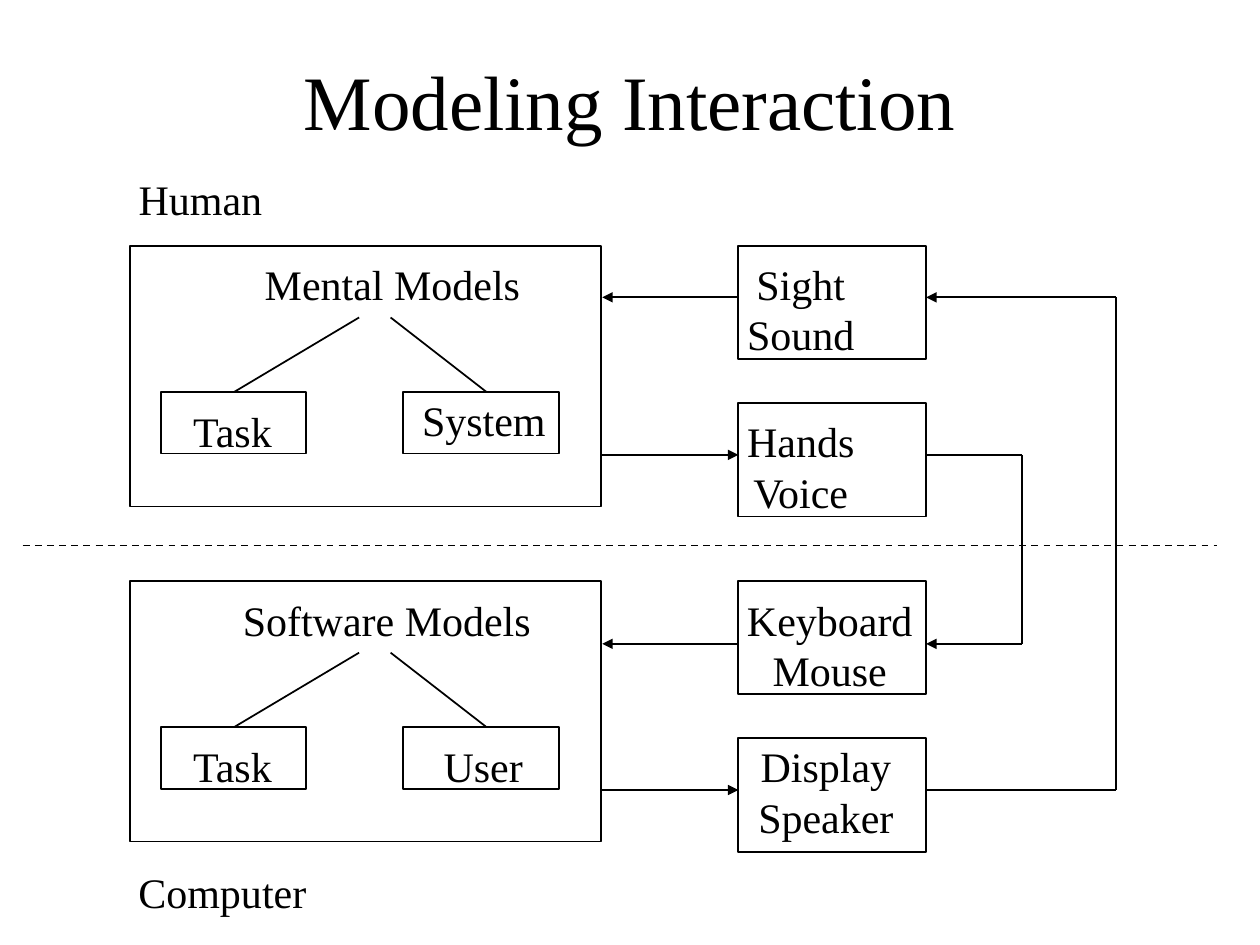
from lxml.etree import SubElement
from pptx import Presentation
from pptx.dml.color import RGBColor
from pptx.enum.dml import MSO_LINE
from pptx.enum.shapes import MSO_CONNECTOR, MSO_SHAPE
from pptx.enum.text import MSO_ANCHOR, MSO_AUTO_SIZE, PP_ALIGN
from pptx.oxml.ns import qn
from pptx.util import Inches, Pt

BLACK = RGBColor(0, 0, 0)
FONT = "Times New Roman"
HALF_STEP = 2.66  # from the human half down to the computer half


class Diagram:
    def __init__(self, slide):
        self.slide = slide
        self.shapes = slide.shapes

    def style_text(self, tf, size):
        for p in tf.paragraphs:
            p.alignment = PP_ALIGN.CENTER
            for r in p.runs:
                r.font.name = FONT
                r.font.size = Pt(size)
                r.font.color.rgb = BLACK

    def title(self, text, *box):
        sp = self.shapes.title
        sp.left, sp.top, sp.width, sp.height = map(Inches, box)
        tf = sp.text_frame
        tf.text = text
        tf.vertical_anchor = MSO_ANCHOR.MIDDLE
        self.style_text(tf, 44)

    def label(self, text, left, top, width):
        height = 0.1 + 0.4 * len(text.split("\n"))
        sp = self.shapes.add_textbox(*map(Inches, (left, top, width, height)))
        tf = sp.text_frame
        tf.text = text
        tf.word_wrap = False
        tf.auto_size = MSO_AUTO_SIZE.SHAPE_TO_FIT_TEXT
        self.style_text(tf, 24)

    def frame(self, *box):
        sp = self.shapes.add_shape(MSO_SHAPE.RECTANGLE, *map(Inches, box))
        sp.shadow.inherit = False
        sp.fill.background()
        sp.line.color.rgb = BLACK
        sp.line.width = Pt(1)

    def line(self, *ends, arrow=False, dashed=False):
        cn = self.shapes.add_connector(MSO_CONNECTOR.STRAIGHT, *map(Inches, ends))
        cn.line.color.rgb = BLACK
        cn.line.width = Pt(1)
        if dashed:
            cn.line.dash_style = MSO_LINE.DASH
        if arrow:
            SubElement(cn.line._ln, qn("a:tailEnd"), type="triangle")
        SubElement(cn._element.spPr, qn("a:effectLst"))

    def route(self, points):
        """Draw straight segments through the points, ending in an arrowhead."""
        last = len(points) - 2
        for i, (start, end) in enumerate(zip(points, points[1:])):
            self.line(*start, *end, arrow=i == last)

    def half(self, dy, input_y):
        """Draw the frames, model tree and side arrows of one half."""
        self.frame(1.03, 1.95 + dy, 3.74, 2.07)
        for left, width, foot, top in ((1.28, 1.15, 1.86, 2.85), (3.2, 1.24, 3.86, 3.1)):
            self.frame(left, 3.11 + dy, width, 0.49)
            self.line(foot, 3.11 + dy, top, 2.52 + dy)
        for top in (1.95, 3.2):
            self.frame(5.86, top + dy, 1.49, 0.9)
        self.line(5.85, input_y, 4.78, input_y, arrow=True)
        self.line(4.77, 3.61 + dy, 5.86, 3.61 + dy, arrow=True)


LABELS = [
    ("Human", 1, 1.33, 1.18),
    ("Mental Models", 2, 2, 2.23),
    ("Task", 1.42, 3.17, 0.85),
    ("System", 3.25, 3.08, 1.18),
    ("Sight\nSound", 5.83, 2, 1.05),
    ("Hands\nVoice", 5.83, 3.25, 1.05),
    ("Software Models", 1.81, 4.67, 2.52),
    ("Task", 1.42, 5.83, 0.85),
    ("User", 3.42, 5.83, 0.83),
    ("Keyboard\nMouse", 5.81, 4.67, 1.55),
    ("Display\nSpeaker", 5.92, 5.83, 1.27),
    ("Computer", 1, 6.83, 1.53),
]


def main():
    prs = Presentation()
    prs.slide_width, prs.slide_height = Inches(10), Inches(7.5)
    title_only = prs.slide_layouts[5]
    d = Diagram(prs.slides.add_slide(title_only))

    d.title("Modeling Interaction", 0.75, 0.17, 8.5, 1.25)
    d.half(0, input_y=2.36)
    d.half(HALF_STEP, input_y=5.11)
    for label in LABELS:
        d.label(*label)

    d.route([(7.36, 3.61), (8.11, 3.61), (8.11, 5.11), (7.35, 5.11)])
    d.route([(7.36, 6.27), (8.86, 6.27), (8.86, 2.36), (7.35, 2.36)])
    d.line(0.18, 4.33, 9.66, 4.33, dashed=True)
    prs.save("out.pptx")


if __name__ == "__main__":
    main()
